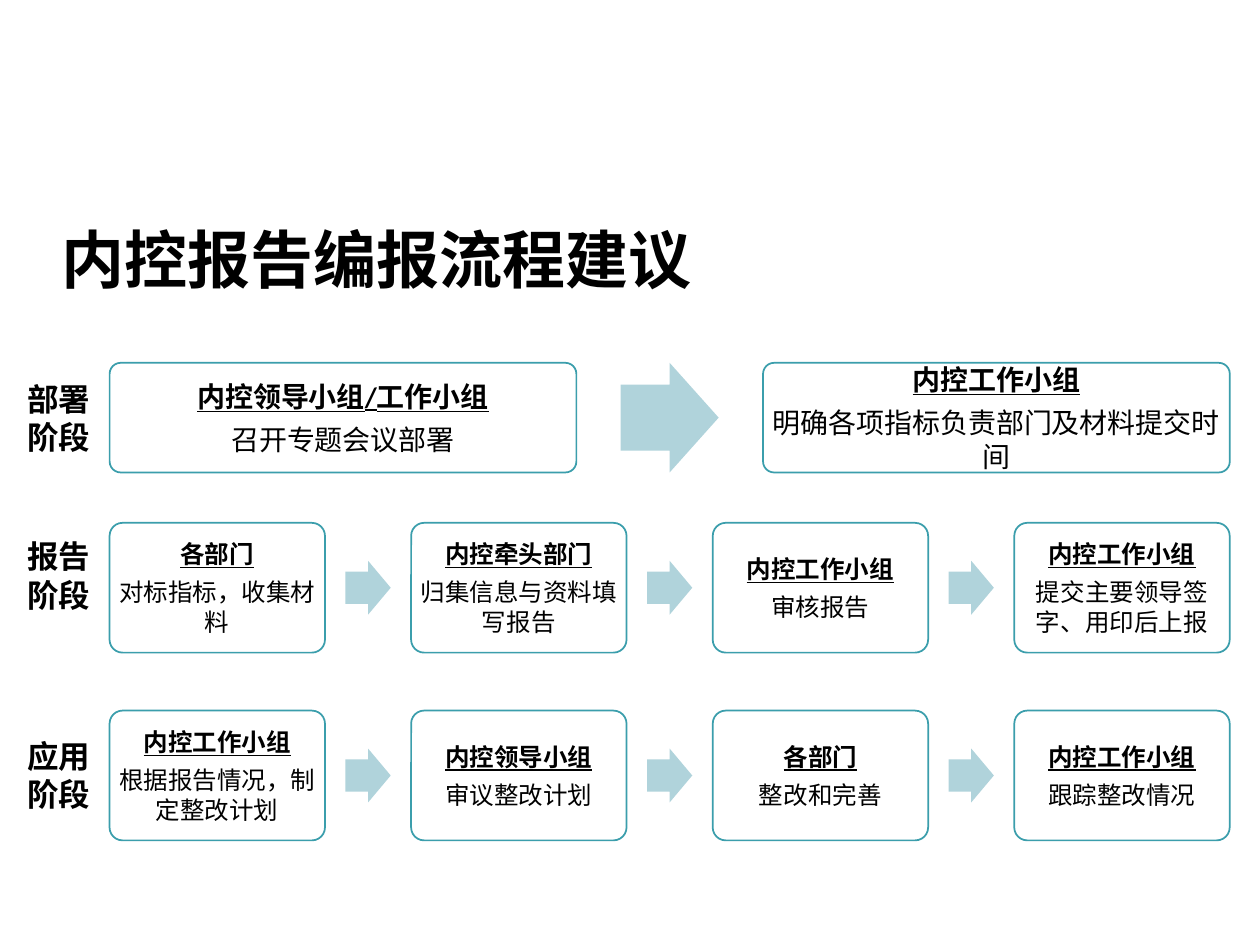
import dataclasses

import lxml.etree
import pptx
import pptx.dml.color
import pptx.enum.shapes
import pptx.enum.text
import pptx.oxml.ns
import pptx.util


@dataclasses.dataclass(frozen=True)
class Theme:
    ink: str = "000000"
    paper: str = "FFFFFF"
    outline: str = "3B9EAC"
    arrow: str = "B0D3DB"
    latin: str = "Calibri"
    chinese: str = "Noto Sans CJK SC"
    title_size: int = 36
    label_size: int = 18
    large_size: int = 16
    small_size: int = 14
    line_pitch: float = 1.21
    paragraph_gap: float = 0.35


@dataclasses.dataclass(frozen=True)
class Box:
    left: float
    top: float
    width: float
    height: float

    def lengths(self):
        return [pptx.util.Inches(value) for value in dataclasses.astuple(self)]


THEME = Theme()
SLIDE_WIDTH, SLIDE_HEIGHT = 10, 7.5
TITLE_BOX = Box(0.28, 1.69, 9.3, 0.71)
FLOW_LEFT, FLOW_WIDTH = 0.87, 8.89
LABEL_LEFT, LABEL_WIDTH, LABEL_HEIGHT = 0.12, 0.8, 0.71
GAP_SHARE = 0.4
ARROW_WIDTH_SHARE, ARROW_HEIGHT_SHARE = 0.21, 0.25

STAGES = [
    ("部署阶段", 2.88, 0.87, 2.96, THEME.large_size, [
        ("内控领导小组/工作小组", "召开专题会议部署"),
        ("内控工作小组", "明确各项指标负责部门及材料提交时间"),
    ]),
    ("报告阶段", 4.15, 1.03, 4.21, THEME.small_size, [
        ("各部门", "对标指标，收集材料"),
        ("内控牵头部门", "归集信息与资料填写报告"),
        ("内控工作小组", "审核报告"),
        ("内控工作小组", "提交主要领导签字、用印后上报"),
    ]),
    ("应用阶段", 5.64, 1.03, 5.79, THEME.small_size, [
        ("内控工作小组", "根据报告情况，制定整改计划"),
        ("内控领导小组", "审议整改计划"),
        ("各部门", "整改和完善"),
        ("内控工作小组", "跟踪整改情况"),
    ]),
]


def color(value):
    return pptx.dml.color.RGBColor.from_string(value)


def write_text(paragraph, text, *, size, latin=THEME.chinese, bold=True,
               underline=False, centered=False, gap=0):
    paragraph._p.get_or_add_pPr().set("hangingPunct", "0")
    paragraph.alignment = (pptx.enum.text.PP_ALIGN.CENTER if centered
                           else pptx.enum.text.PP_ALIGN.LEFT)
    paragraph.line_spacing = pptx.util.Pt(round(size * THEME.line_pitch, 1))
    paragraph.space_before = pptx.util.Pt(0)
    paragraph.space_after = pptx.util.Pt(gap)
    run = paragraph.add_run()
    run.text = text
    run.font.size = pptx.util.Pt(size)
    run.font.name = latin
    run.font.bold = bold
    run.font.underline = underline
    run.font.color.rgb = color(THEME.ink)
    east_asian = lxml.etree.Element(pptx.oxml.ns.qn("a:ea"), typeface=THEME.chinese)
    run.font._element.find(pptx.oxml.ns.qn("a:latin")).addnext(east_asian)


def set_frame(frame, horizontal, vertical):
    frame.word_wrap = True
    frame.auto_size = pptx.enum.text.MSO_AUTO_SIZE.NONE
    frame.vertical_anchor = pptx.enum.text.MSO_ANCHOR.MIDDLE
    frame.margin_left = frame.margin_right = pptx.util.Inches(horizontal)
    frame.margin_top = frame.margin_bottom = pptx.util.Inches(vertical)


def add_title(slide, box, text):
    title = slide.shapes.title
    title.left, title.top, title.width, title.height = box.lengths()
    title.fill.solid()
    title.fill.fore_color.rgb = color(THEME.paper)
    set_frame(title.text_frame, 0.21, 0.05)
    write_text(title.text_frame.paragraphs[0], text, size=THEME.title_size)


def add_label(slide, box, text):
    label = slide.shapes.add_textbox(*box.lengths())
    set_frame(label.text_frame, 0.1, 0.05)
    write_text(label.text_frame.paragraphs[0], text, size=THEME.label_size)


def add_shape(slide, kind, box, fill, adjustments, outline=None):
    shape = slide.shapes.add_shape(kind, *box.lengths())
    shape.shadow.inherit = False
    shape.fill.solid()
    shape.fill.fore_color.rgb = color(fill)
    for index, value in enumerate(adjustments):
        shape.adjustments[index] = value
    if outline:
        shape.line.color.rgb = color(outline)
        shape.line.width = pptx.util.Pt(1)
    else:
        shape.line.fill.background()
    return shape


def add_step(slide, box, heading, task, size):
    shape = add_shape(slide, pptx.enum.shapes.MSO_SHAPE.ROUNDED_RECTANGLE, box,
                      THEME.paper, [0.1], THEME.outline)
    frame = shape.text_frame
    set_frame(frame, 0.03, 0.03)
    write_text(frame.paragraphs[0], heading, size=size, latin=THEME.latin,
               underline=True, centered=True, gap=round(size * THEME.paragraph_gap, 1))
    write_text(frame.add_paragraph(), task, size=size, latin=THEME.latin,
               bold=False, centered=True)


def add_flow(slide, box, steps, size):
    count = len(steps)
    width = box.width / (count + GAP_SHARE * (count - 1))
    gap = width * GAP_SHARE
    arrow_width = width * ARROW_WIDTH_SHARE
    arrow_height = min(width * ARROW_HEIGHT_SHARE, box.height)
    for index, (heading, task) in enumerate(steps):
        left = box.left + index * (width + gap)
        add_step(slide, Box(left, box.top, width, box.height), heading, task, size)
        if index < count - 1:
            arrow_box = Box(left + width + (gap - arrow_width) / 2,
                            box.top + (box.height - arrow_height) / 2,
                            arrow_width, arrow_height)
            add_shape(slide, pptx.enum.shapes.MSO_SHAPE.RIGHT_ARROW, arrow_box,
                      THEME.arrow, [0.6, 0.5])


def main():
    presentation = pptx.Presentation()
    presentation.slide_width = pptx.util.Inches(SLIDE_WIDTH)
    presentation.slide_height = pptx.util.Inches(SLIDE_HEIGHT)
    slide = presentation.slides.add_slide(presentation.slide_layouts[5])
    add_title(slide, TITLE_BOX, "内控报告编报流程建议")
    for name, top, height, label_top, size, steps in STAGES:
        add_flow(slide, Box(FLOW_LEFT, top, FLOW_WIDTH, height), steps, size)
        add_label(slide, Box(LABEL_LEFT, label_top, LABEL_WIDTH, LABEL_HEIGHT), name)
    presentation.save("out.pptx")


if __name__ == "__main__":
    main()
